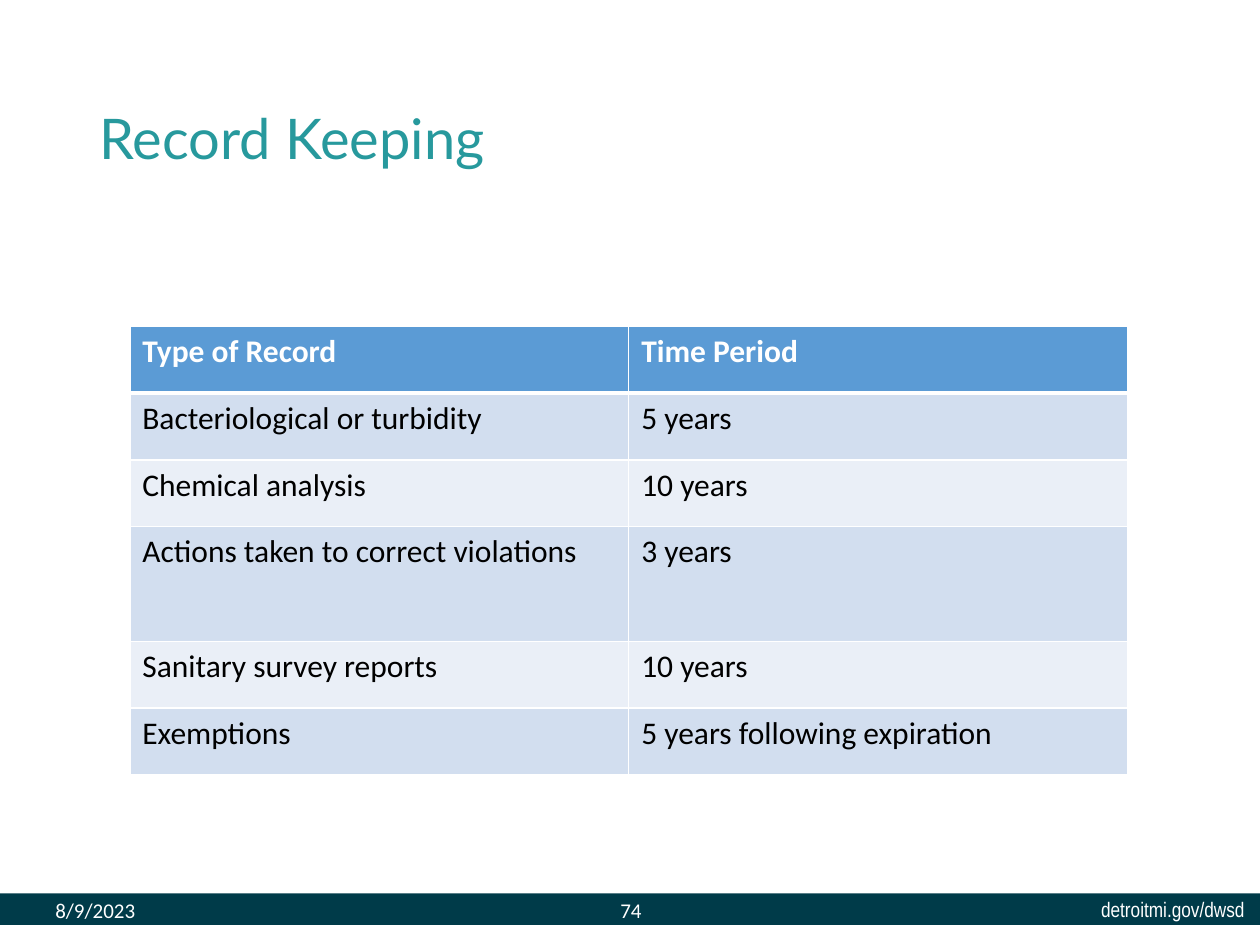
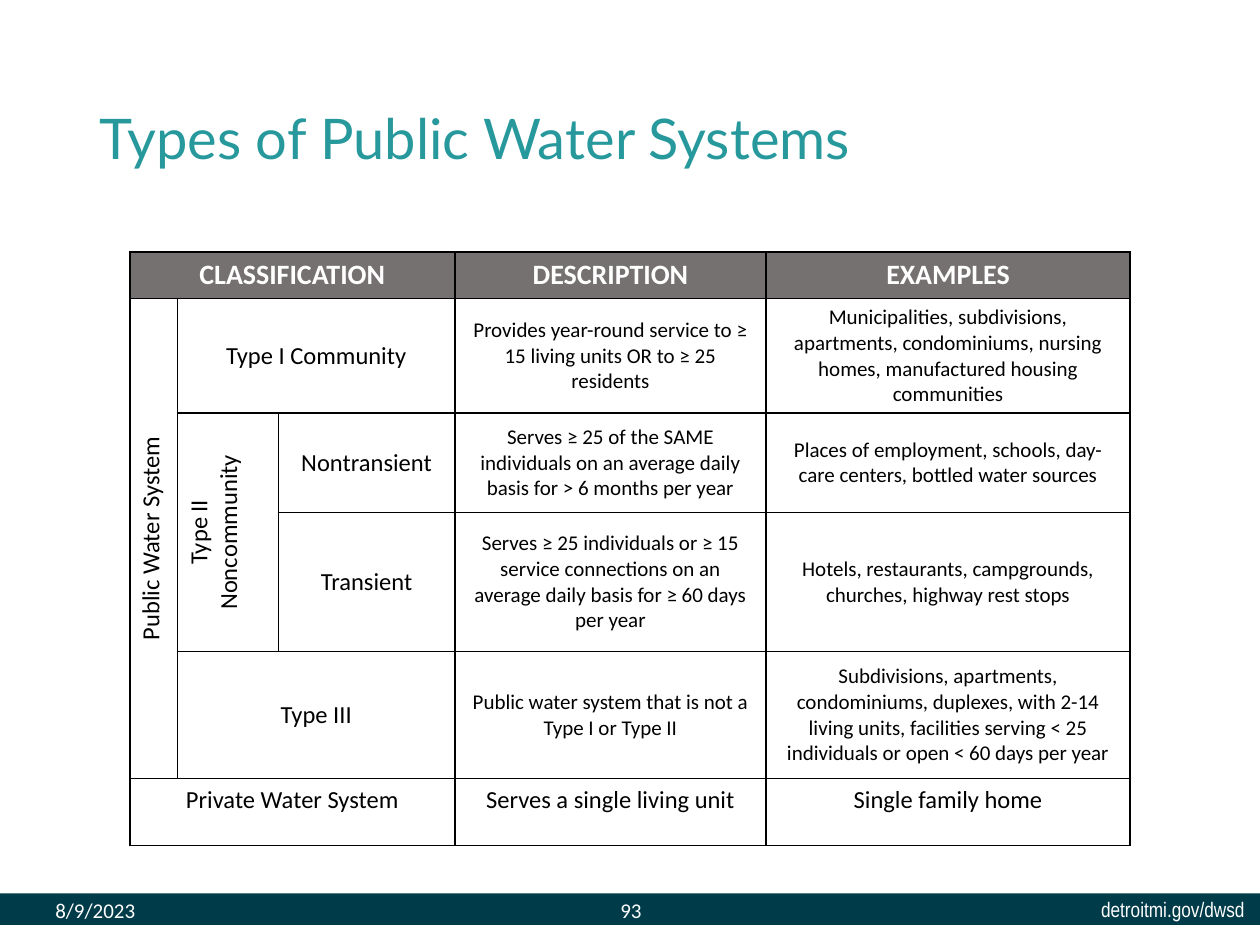
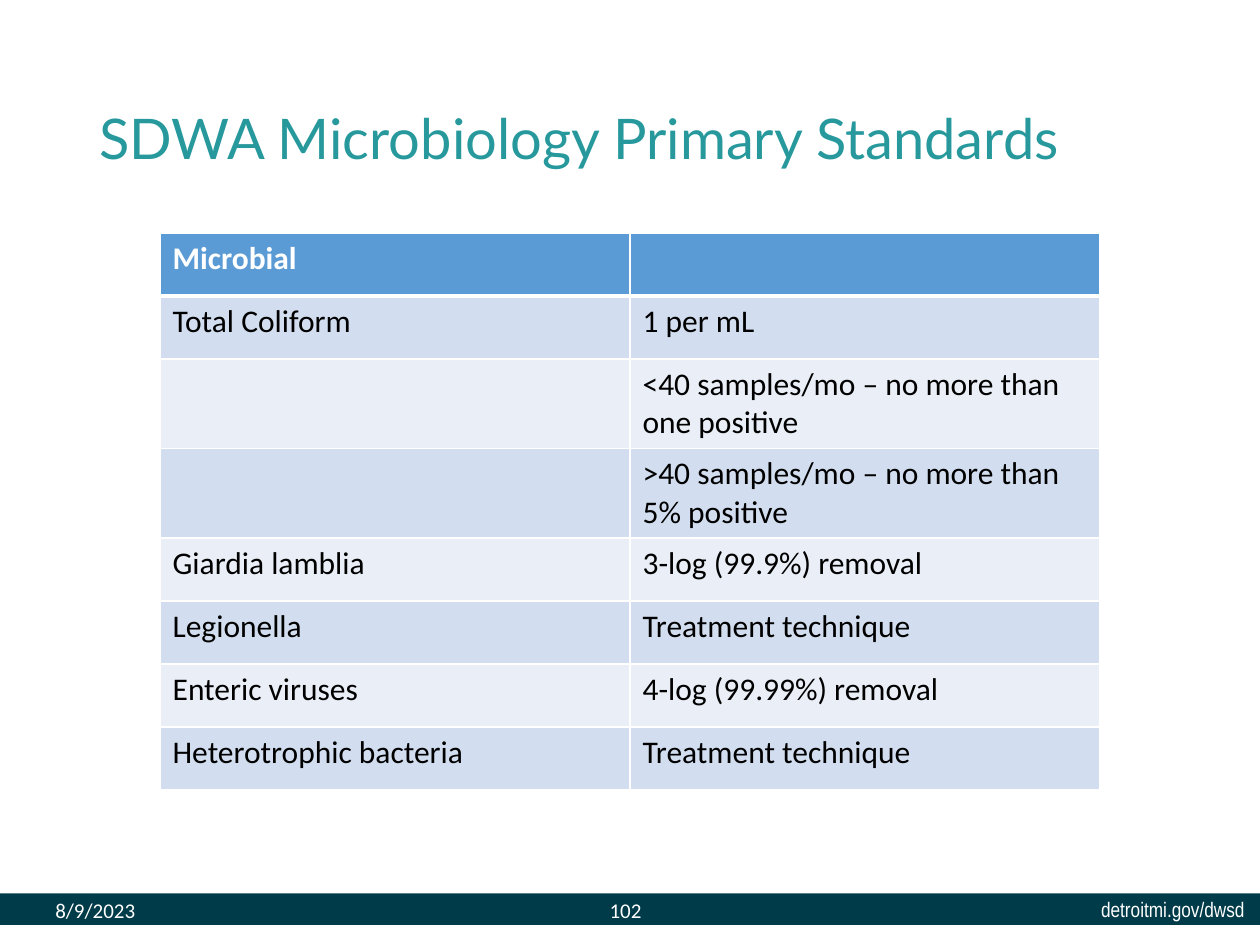
from lxml import etree
from pptx import Presentation
from pptx.dml.color import RGBColor
from pptx.enum.shapes import MSO_SHAPE
from pptx.enum.text import MSO_ANCHOR, MSO_AUTO_SIZE, PP_ALIGN
from pptx.oxml.ns import qn
from pptx.util import Inches, Pt

TOP, MIDDLE, BOTTOM = MSO_ANCHOR.TOP, MSO_ANCHOR.MIDDLE, MSO_ANCHOR.BOTTOM
LEFT, CENTER, RIGHT = PP_ALIGN.LEFT, PP_ALIGN.CENTER, PP_ALIGN.RIGHT

SLIDE_WIDTH, SLIDE_HEIGHT = 10, 7.5
TITLE_FONT, BODY_FONT, URL_FONT = "Lato", "Calibri", "Arial Narrow"
TEAL, NAVY, WHITE, BLACK = "27999D", "003B49", "FFFFFF", "000000"
BLUE, GRAY = "5B9BD5", "767171"
BANDS = ("EAEFF7", "D2DEEF")
DATE, URL = "8/9/2023", "detroitmi.gov/dwsd"

RECORDS = [
    ("Type of Record", "Time Period"),
    ("Bacteriological or turbidity", "5 years"),
    ("Chemical analysis", "10 years"),
    ("Actions taken to correct violations", "3 years"),
    ("Sanitary survey reports", "10 years"),
    ("Exemptions", "5 years following expiration"),
]
STANDARDS = [
    ("Microbial", ""),
    ("Total Coliform", "1 per mL"),
    ("", "<40 samples/mo – no more than one positive"),
    ("", ">40 samples/mo – no more than 5% positive"),
    ("Giardia lamblia", "3-log (99.9%) removal"),
    ("Legionella", "Treatment technique"),
    ("Enteric viruses", "4-log (99.99%) removal"),
    ("Heterotrophic bacteria", "Treatment technique"),
]
# None marks a place covered by a merged cell.
SYSTEMS = [
    ("CLASSIFICATION", None, None, "DESCRIPTION", "EXAMPLES"),
    ("Public Water System", "Type I Community", None,
     "Provides year-round service to ≥ 15 living units OR to ≥ 25 residents",
     "Municipalities, subdivisions, apartments, condominiums, nursing homes, "
     "manufactured housing communities"),
    (None, "Type II Noncommunity", "Nontransient",
     "Serves ≥ 25 of the SAME individuals on an average daily basis for "
     "> 6 months per year",
     "Places of employment, schools, day-care centers, bottled water sources"),
    (None, None, "Transient",
     "Serves ≥ 25 individuals or ≥ 15 service connections on an average daily "
     "basis for ≥ 60 days per year",
     "Hotels, restaurants, campgrounds, churches, highway rest stops"),
    (None, "Type III", None,
     "Public water system that is not a Type I or Type II",
     "Subdivisions, apartments, condominiums, duplexes, with 2-14 living units, "
     "facilities serving < 25 individuals or open < 60 days per year"),
    ("Private Water System", None, None, "Serves a single living unit",
     "Single family home"),
]
# First and last (row, column) of each merged cell.
SYSTEM_MERGES = [((0, 0), (0, 2)), ((1, 0), (4, 0)), ((1, 1), (1, 2)),
                 ((2, 1), (3, 1)), ((4, 1), (4, 2)), ((5, 0), (5, 2))]
VERTICAL_ANCHORS = {(1, 0): BOTTOM, (2, 1): TOP}


def color(hex_code):
    return RGBColor.from_string(hex_code)


def write_text(frame, text, *, size=12, font=BODY_FONT, ink=WHITE, bold=False,
               align=LEFT, spacing=None):
    paragraph = frame.paragraphs[0]
    paragraph.text = text
    paragraph.alignment = align
    paragraph.line_spacing = spacing
    paragraph.font.size = Pt(size)
    paragraph.font.name = font
    paragraph.font.bold = bold
    paragraph.font.color.rgb = color(ink)


def add_label(slide, box, text, *, anchor=MIDDLE, wrap=True, **text_format):
    frame = slide.shapes.add_textbox(*map(Inches, box)).text_frame
    frame.word_wrap = wrap
    frame.auto_size = MSO_AUTO_SIZE.NONE if wrap else MSO_AUTO_SIZE.SHAPE_TO_FIT_TEXT
    frame.vertical_anchor = anchor
    write_text(frame, text, **text_format)


def add_footer(slide, page):
    band = slide.shapes.add_shape(
        MSO_SHAPE.RECTANGLE, *map(Inches, (0, 7.09, SLIDE_WIDTH, 0.25)))
    band.shadow.inherit = False
    band.fill.solid()
    band.fill.fore_color.rgb = color(NAVY)
    band.line.fill.background()
    add_label(slide, (8.64, 7.07, 1.35, 0.3), URL, anchor=TOP, wrap=False,
              font=URL_FONT)
    add_label(slide, (0.34, 7.02, 2.25, 0.4), DATE)
    add_label(slide, (2.94, 7.02, 2.25, 0.4), str(page), align=RIGHT)


def add_content_slide(deck, title, page):
    slide = deck.slides.add_slide(deck.slide_layouts[6])
    add_footer(slide, page)
    add_label(slide, (0.69, 0.4, 8.62, 1.45), title, size=32, font=TITLE_FONT,
              ink=TEAL, spacing=0.9)
    return slide


def add_grid(slide, left, top, widths, heights):
    table = slide.shapes.add_table(
        len(heights), len(widths), Inches(left), Inches(top),
        Inches(sum(widths)), Inches(sum(heights))).table
    table.horz_banding = False
    for column, width in zip(table.columns, widths):
        column.width = Inches(width)
    for row, height in zip(table.rows, heights):
        row.height = Inches(height)
    return table


def style_cell(cell, ink, top=1, bottom=1, fill=None):
    """Border widths are in points; the borders must precede the fill."""
    properties = cell._tc.get_or_add_tcPr()
    for side, width in (("L", 1), ("R", 1), ("T", top), ("B", bottom)):
        line = etree.SubElement(properties, qn(f"a:ln{side}"), w=str(Pt(width)))
        paint = etree.SubElement(line, qn("a:solidFill"))
        etree.SubElement(paint, qn("a:srgbClr"), val=ink)
    if fill:
        cell.fill.solid()
        cell.fill.fore_color.rgb = color(fill)
    else:
        cell.fill.background()


def add_banded_table(slide, left, top, column_width, heights, rows):
    table = add_grid(slide, left, top, [column_width] * 2, heights)
    for r, texts in enumerate(rows):
        header = r == 0
        for c, text in enumerate(texts):
            cell = table.cell(r, c)
            style_cell(cell, WHITE, top=3 if r == 1 else 1,
                       bottom=3 if header else 1,
                       fill=BLUE if header else BANDS[r % 2])
            write_text(cell.text_frame, text, size=18, bold=header,
                       ink=WHITE if header else BLACK)


def add_systems_table(slide):
    table = add_grid(slide, 1.03, 2, [0.38, 0.8, 1.4, 2.47, 2.89],
                     [0.37, 0.91, 0.79, 1.1, 1.01, 0.53])
    last = len(SYSTEMS) - 1
    for r, texts in enumerate(SYSTEMS):
        header, inner = r == 0, 0 < r < last
        for c, text in enumerate(texts):
            cell = table.cell(r, c)
            style_cell(cell, BLACK, fill=GRAY if header else None)
            if text is None:
                continue
            size = 16 if header else 12 if inner and c > 2 else 14
            write_text(cell.text_frame, text, size=size, bold=header,
                       ink=WHITE if header else BLACK, align=CENTER)
            cell.vertical_anchor = MIDDLE if inner else TOP
            if (r, c) in VERTICAL_ANCHORS:
                cell.vertical_anchor = VERTICAL_ANCHORS[r, c]
                cell._tc.get_or_add_tcPr().set("vert", "vert270")
    for first, final in SYSTEM_MERGES:
        table.cell(*first).merge(table.cell(*final))


def main():
    deck = Presentation()
    deck.slide_width, deck.slide_height = Inches(SLIDE_WIDTH), Inches(SLIDE_HEIGHT)

    records = add_content_slide(deck, "Record Keeping", 74)
    add_banded_table(records, 1.03, 2.59, 3.96,
                     [0.53, 0.53, 0.53, 0.91, 0.53, 0.53], RECORDS)

    systems = add_content_slide(deck, "Types of Public Water Systems", 93)
    add_systems_table(systems)

    standards = add_content_slide(deck, "SDWA Microbiology Primary Standards", 102)
    add_banded_table(standards, 1.27, 1.85, 3.73,
                     [0.5, 0.5, 0.71, 0.71, 0.5, 0.5, 0.5, 0.5], STANDARDS)

    deck.save("out.pptx")


if __name__ == "__main__":
    main()
